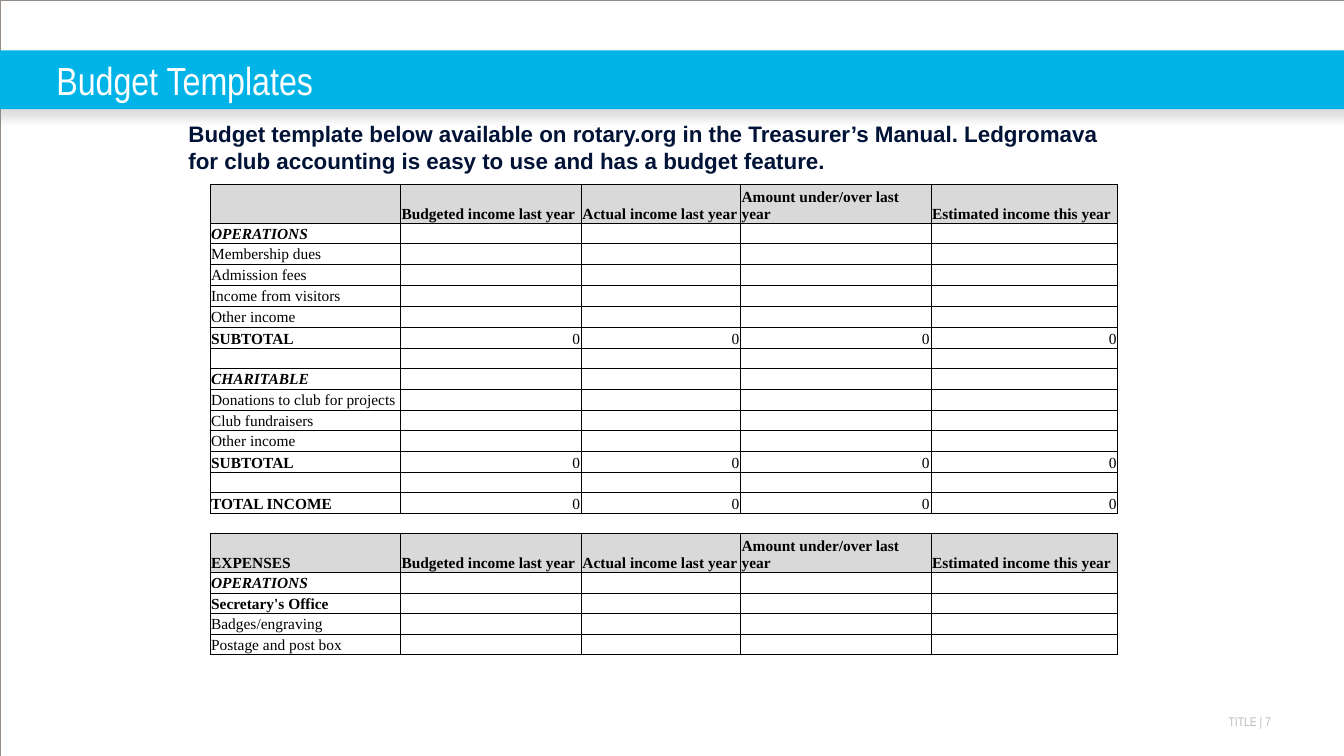
from dataclasses import dataclass

from lxml import etree
from pptx import Presentation
from pptx import util as u
from pptx.dml.color import RGBColor
from pptx.enum import shapes, text
from pptx.oxml import parse_xml
from pptx.oxml.ns import nsdecls, qn


@dataclass(frozen=True)
class Theme:
    band: str = "01B4E7"
    frame: str = "958D85"
    white: str = "FFFFFF"
    navy: str = "001236"
    pale: str = "BCBDC0"
    ink: str = "000000"
    head: str = "D9D9D9"
    shade: str = "808080"
    narrow: str = "Arial Narrow"
    sans: str = "Arial"
    serif: str = "Times New Roman"
    title: int = 28
    intro: int = 16
    cell: int = 11
    foot: int = 9


LOOK = Theme()
HEADS = ["Budgeted income last year", "Actual income last year",
         "Amount under/over last year", "Estimated income this year"]
# Each row is a kind and its label
ROWS = [
    ("head", ""),
    ("group", "OPERATIONS"),
    ("item", "Membership dues"),
    ("item", "Admission fees"),
    ("tall", "Income from visitors"),
    ("item", "Other income"),
    ("sum", "SUBTOTAL"),
    ("item", ""),
    ("group", "CHARITABLE"),
    ("item", "Donations to club for projects"),
    ("item", "Club fundraisers"),
    ("item", "Other income"),
    ("sum", "SUBTOTAL"),
    ("item", ""),
    ("sum", "TOTAL INCOME"),
    ("gap", ""),
    ("head", "EXPENSES"),
    ("group", "OPERATIONS"),
    ("office", "Secretary's Office"),
    ("item", "Badges/engraving"),
    ("item", "Postage and post box"),
]
WIDTHS = [4.8, 4.56, 4.01, 4.8, 4.71]
HEIGHTS = {"head": 0.97, "tall": 0.55}
ROW = 0.52


def style(para, face, size, color, bold=False, italic=False):
    font = para.font
    font.name, font.size = face, u.Pt(size)
    font.bold, font.italic = bold, italic
    font.color.rgb = RGBColor.from_string(color)


def place(shape, left, top, width, height):
    shape.left, shape.top = u.Cm(left), u.Cm(top)
    shape.width, shape.height = u.Cm(width), u.Cm(height)


def trim(frame):
    """Remove the insets and keep the text size fixed."""
    frame.margin_left = frame.margin_right = 0
    frame.margin_top = frame.margin_bottom = 0
    frame.auto_size = text.MSO_AUTO_SIZE.NONE


def add_box(slide, area, words):
    box = slide.shapes.add_textbox(*map(u.Cm, area))
    box.text_frame.word_wrap = True
    box.text_frame.text = words
    return box.text_frame


def add_rect(slide, area):
    rect = slide.shapes.add_shape(shapes.MSO_SHAPE.RECTANGLE, *map(u.Cm, area))
    rect.shadow.inherit = False
    return rect


def add_frame(slide):
    frame = add_rect(slide, (0, 0, 33.87, 19.05))
    frame.fill.background()
    frame.line.color.rgb = RGBColor.from_string(LOOK.frame)
    frame.line.width = u.Pt(0.13)


def add_band(slide):
    band = add_rect(slide, (-0.28, 1.27, 34.44, 1.48))
    band.fill.solid()
    band.fill.fore_color.rgb = RGBColor.from_string(LOOK.band)
    band.line.fill.background()
    glow = band.element.spPr.find(qn("a:effectLst"))
    glow.append(parse_xml(
        f'<a:outerShdw {nsdecls("a")} blurRad="{u.Pt(7)}" dist="{u.Pt(4.8)}" '
        f'dir="5400000" rotWithShape="0"><a:srgbClr val="{LOOK.shade}">'
        '<a:alpha val="25000"/></a:srgbClr></a:outerShdw>'))


def set_title(slide, words):
    title = slide.shapes.title
    title.element.getparent().append(title.element)  # in front of the band
    place(title, 1.42, 1.27, 32.45, 1.48)
    frame = title.text_frame
    trim(frame)
    frame.vertical_anchor = text.MSO_ANCHOR.MIDDLE
    frame.text = words
    para = frame.paragraphs[0]
    para.alignment = text.PP_ALIGN.LEFT
    style(para, LOOK.narrow, LOOK.title, LOOK.white)


def set_edges(cell, kind):
    """Rule all four sides, or only top and bottom in a gap row."""
    props = cell._tc.get_or_add_tcPr()
    for spot, side in enumerate("LRTB"):
        if kind == "gap" and side in "LR":
            fill = "<a:noFill/>"
        else:
            fill = f'<a:solidFill><a:srgbClr val="{LOOK.ink}"/></a:solidFill>'
        props.insert(spot, parse_xml(
            f'<a:ln{side} {nsdecls("a")} w="{u.Pt(0.5)}">{fill}</a:ln{side}>'))


def fill_cell(cell, kind, words, first):
    cell.margin_left = cell.margin_right = cell.margin_top = u.Cm(0.03)
    cell.margin_bottom = 0
    low = kind in ("head", "sum")
    cell.vertical_anchor = (text.MSO_ANCHOR.BOTTOM if low
                            else text.MSO_ANCHOR.MIDDLE)
    if kind == "head":
        cell.fill.solid()
        cell.fill.fore_color.rgb = RGBColor.from_string(LOOK.head)
    else:
        cell.fill.background()
    set_edges(cell, kind)
    cell.text = words
    para = cell.text_frame.paragraphs[0]
    if kind == "sum" and not first:
        para.alignment = text.PP_ALIGN.RIGHT
    bold = kind == "head" or first and kind in ("group", "sum", "office")
    style(para, LOOK.serif, LOOK.cell, LOOK.ink, bold, kind == "group")
    if not words:  # keeps empty rows low
        etree.SubElement(para._p, qn("a:endParaRPr"), sz=str(LOOK.cell * 100))


def add_budget(slide):
    highs = [HEIGHTS.get(kind, ROW) for kind, _ in ROWS]
    area = (5.29, 4.65, sum(WIDTHS), sum(highs))
    table = slide.shapes.add_table(
        len(ROWS), len(WIDTHS), *map(u.Cm, area)).table
    table.first_row = table.horz_banding = False
    for col, width in zip(table.columns, WIDTHS):
        col.width = u.Cm(width)
    rest = {"head": HEADS, "sum": ["0"] * len(HEADS)}
    for row, high, (kind, label) in zip(table.rows, highs, ROWS):
        row.height = u.Cm(high)
        words = [label, *rest.get(kind, [""] * len(HEADS))]
        for spot, cell in enumerate(row.cells):
            fill_cell(cell, kind, words[spot], spot == 0)


def add_intro(slide):
    frame = add_box(slide, (4.5, 2.9, 24.08, 1.63),
                    "Budget template below available on rotary.org in the "
                    "Treasurer’s Manual. Ledgromava for club accounting is "
                    "easy to use and has a budget feature.")
    style(frame.paragraphs[0], LOOK.sans, LOOK.intro, LOOK.navy, bold=True)


def add_foot(slide):
    frame = add_box(slide, (26.1, 17.98, 5.93, 0.38), "TITLE | 7")
    trim(frame)
    para = frame.paragraphs[0]
    para.alignment = text.PP_ALIGN.RIGHT
    style(para, LOOK.narrow, LOOK.foot, LOOK.pale)


def main():
    deck = Presentation()
    deck.slide_width, deck.slide_height = u.Cm(33.87), u.Cm(19.05)
    slide = deck.slides.add_slide(deck.slide_layouts[5])
    add_foot(slide)
    add_frame(slide)
    add_band(slide)
    set_title(slide, "Budget Templates")
    add_budget(slide)
    add_intro(slide)
    deck.save("out.pptx")


if __name__ == "__main__":
    main()
